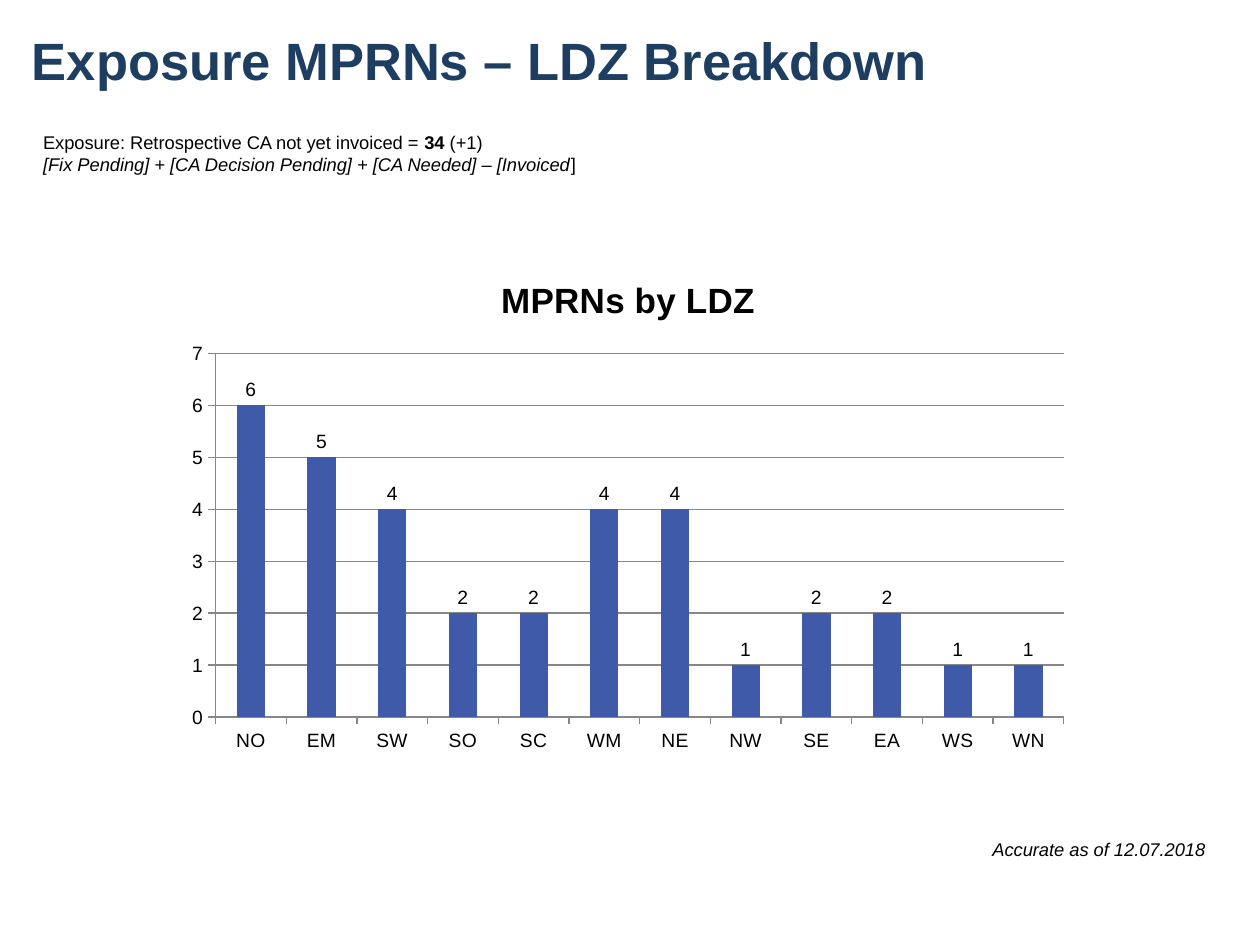
from pptx import Presentation
from pptx.chart.data import CategoryChartData
from pptx.dml.color import RGBColor
from pptx.enum.chart import XL_CHART_TYPE as ChartType, XL_LABEL_POSITION as LabelPosition, XL_TICK_MARK as Tick
from pptx.enum.text import MSO_ANCHOR as Anchor, PP_ALIGN as Align
from pptx.util import Pt

PX = 914400 // 126
FONT = "Arial"
COLORS = {"navy": "1D3E61", "black": "000000", "blue": "3E5AA8", "grid": "878787"}


def color(name):
    return RGBColor.from_string(COLORS[name])


def add_text(lines, left, top, width, height, size=10.5, ink="black",
             align=Align.LEFT, anchor=Anchor.TOP, margins=(13, 6)):
    box = slide.shapes.add_textbox(left * PX, top * PX, width * PX, height * PX)
    frame = box.text_frame
    frame.word_wrap = True
    frame.vertical_anchor = anchor
    frame.margin_left = frame.margin_right = margins[0] * PX
    frame.margin_top = frame.margin_bottom = margins[1] * PX
    for number, runs in enumerate(lines):
        paragraph = frame.paragraphs[0] if number == 0 else frame.add_paragraph()
        paragraph.alignment = align
        for text, style in runs:
            run = paragraph.add_run()
            run.text = text
            run.font.name = FONT
            run.font.size = Pt(size)
            run.font.bold = style == "bold"
            run.font.italic = style == "italic"
            run.font.color.rgb = color(ink)


prs = Presentation()
prs.slide_width = 1260 * PX
prs.slide_height = 945 * PX
slide = prs.slides.add_slide(prs.slide_layouts[6])

add_text([[("Exposure MPRNs – LDZ Breakdown", "bold")]], 32, -8, 1197, 134,
         size=30, ink="navy", anchor=Anchor.MIDDLE, margins=(0, 0))
add_text([[("Accurate as of 12.07.2018", "italic")]], 971, 832, 256, 35, align=Align.CENTER)
add_text([
    [("Exposure: Retrospective CA not yet invoiced = ", ""), ("34 ", "bold"), ("(+1)", "")],
    [("[Fix Pending] + [CA Decision Pending] + [CA Needed] – [Invoiced", "italic"), ("]", "")],
], 30, 125, 828, 59)

mprns_by_zone = {"NO": 6, "EM": 5, "SW": 4, "SO": 2, "SC": 2, "WM": 4,
                 "NE": 4, "NW": 1, "SE": 2, "EA": 2, "WS": 1, "WN": 1}
zone_data = CategoryChartData(number_format="#,##0")
zone_data.categories = list(mprns_by_zone)
zone_data.add_series("Series 1", list(mprns_by_zone.values()))
zone_chart = slide.shapes.add_chart(
    ChartType.COLUMN_CLUSTERED, 174 * PX, 255 * PX, 908 * PX, 507 * PX, zone_data).chart
zone_chart.font.name = FONT
zone_chart.font.size = Pt(11)
zone_chart.font.color.rgb = color("black")
zone_chart.has_legend = False

zone_chart.has_title = True
heading = zone_chart.chart_title.text_frame
heading.text = "MPRNs by LDZ"
heading_font = heading.paragraphs[0].runs[0].font
heading_font.name = FONT
heading_font.size = Pt(20)
heading_font.bold = True
heading_font.color.rgb = color("black")
zone_chart.chart_title.include_in_layout = False

zone_axis, count_axis = zone_chart.category_axis, zone_chart.value_axis
count_axis.minimum_scale = 0
count_axis.maximum_scale = 7
count_axis.major_unit = 1
count_axis.has_major_gridlines = True
count_axis.tick_labels.number_format = "#,##0"
count_axis.tick_labels.number_format_is_linked = False
for axis in (zone_axis, count_axis):
    axis.major_tick_mark = Tick.OUTSIDE
    axis.minor_tick_mark = Tick.NONE
for line in (zone_axis.format.line, count_axis.format.line, count_axis.major_gridlines.format.line):
    line.color.rgb = color("grid")
    line.width = Pt(0.75)

columns = zone_chart.plots[0]
columns.gap_width = 150
columns.vary_by_categories = False
columns.series[0].format.fill.solid()
columns.series[0].format.fill.fore_color.rgb = color("blue")
columns.has_data_labels = True
counts = columns.data_labels
counts.show_value = True
counts.number_format = "#,##0"
counts.number_format_is_linked = False
counts.position = LabelPosition.OUTSIDE_END

prs.save("out.pptx")
